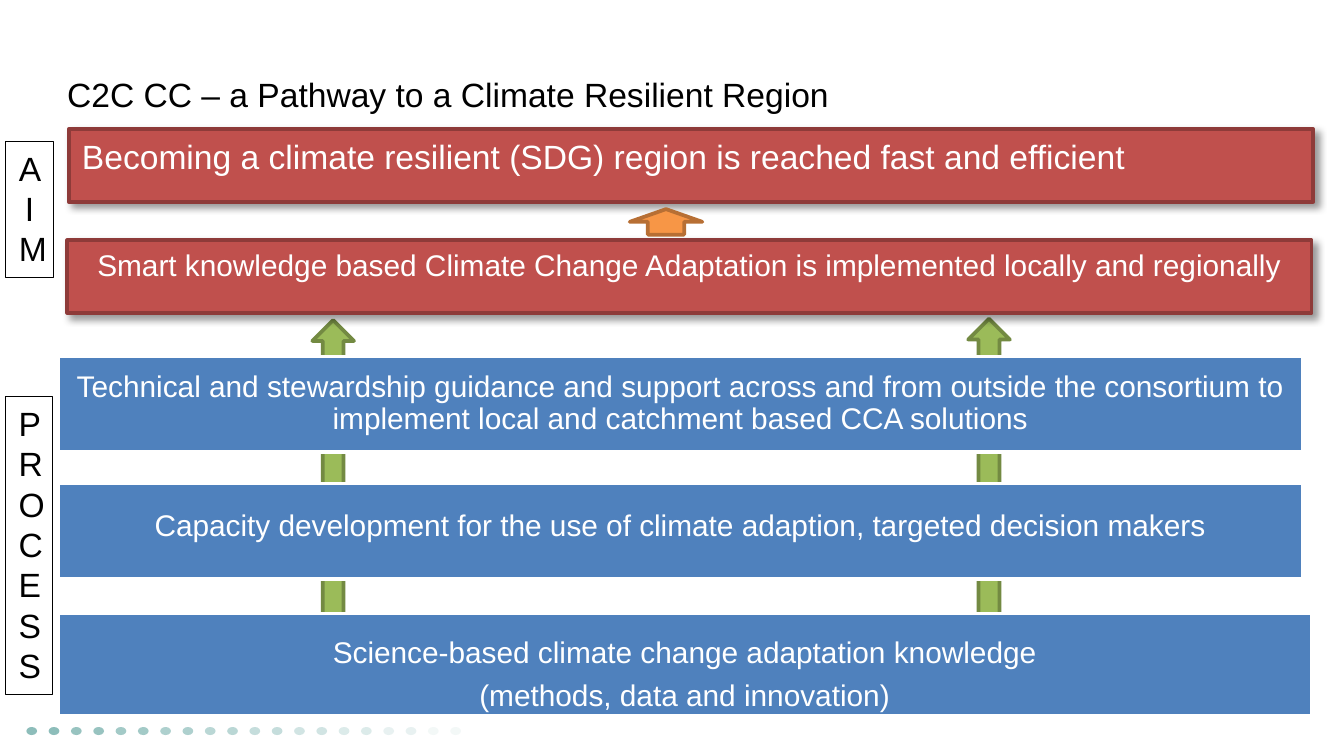
from dataclasses import dataclass
from typing import Any, NamedTuple

from lxml.etree import SubElement
from pptx import Presentation
from pptx.dml.color import RGBColor
from pptx.enum.shapes import MSO_SHAPE as Kind
from pptx.enum.text import MSO_ANCHOR as Anchor, PP_ALIGN as Align
from pptx.oxml.ns import qn
from pptx.util import Inches, Pt

COLS = 100
WIDE = Inches(10)
HIGH = WIDE * 9 // 16
CELL = WIDE / COLS


@dataclass(frozen=True)
class Theme:
    face: str = "Arial"
    big: float = 18
    mid: float = 16
    thick: float = 2
    thin: float = 0.25
    ink: str = "000000"
    paper: str = "FFFFFF"
    dot: str = "8DBDBA"
    blue: str = "4F81BD"
    red: str = "C0504D"
    maroon: str = "8E3B39"
    green: str = "9BBB59"
    olive: str = "738A42"
    gold: str = "F79646"
    brown: str = "B76F34"


THEME = Theme()


class Box(NamedTuple):
    col: float
    row: float
    wide: float
    high: float


class Look(NamedTuple):
    fill: str | None
    line: str | None
    width: float = THEME.thick


class Type(NamedTuple):
    size: float
    color: str
    align: Any = Align.LEFT
    pad: float = 0
    anchor: Any = Anchor.MIDDLE
    para: dict[str, Any] = {}


class Band(NamedTuple):
    box: Box
    high: float
    lines: tuple[str, ...]


class Goal(NamedTuple):
    box: Box
    text: str
    size: float
    align: Any


class Tag(NamedTuple):
    box: Box
    text: str
    align: Any


class Arrow(NamedTuple):
    box: Box
    look: Look


def place(box: Box) -> tuple[int, ...]:
    return tuple(round(cells * CELL) for cells in box)


def assign(target: Any, values: dict[str, Any]) -> None:
    for key, value in values.items():
        setattr(target, key, value)


def draw(shapes: Any, kind: Any, box: Box, look: Look) -> Any:
    shape = shapes.add_shape(kind, *place(box))
    shape.shadow.inherit = False
    if look.fill:
        shape.fill.solid()
        shape.fill.fore_color.rgb = RGBColor.from_string(look.fill)
    else:
        shape.fill.background()
    if look.line:
        shape.line.color.rgb = RGBColor.from_string(look.line)
        shape.line.width = Pt(look.width)
    else:
        shape.line.fill.background()
    return shape


def write(shape: Any, lines: tuple[str, ...], style: Type) -> None:
    frame = shape.text_frame
    sides = ("left", "right", "top", "bottom")
    assign(frame, {"word_wrap": True, "vertical_anchor": style.anchor})
    if style.pad >= 0:
        assign(frame, {f"margin_{side}": Inches(style.pad) for side in sides})
    for i, line in enumerate(lines):
        para = frame.add_paragraph() if i else frame.paragraphs[0]
        assign(para, {"alignment": style.align, **style.para})
        run = para.add_run()
        run.text = line
        assign(run.font, {"name": THEME.face, "size": Pt(style.size)})
        run.font.color.rgb = RGBColor.from_string(style.color)


def label(shapes: Any, box: Box, lines: tuple[str, ...], style: Type) -> None:
    write(shapes.add_textbox(*place(box)), lines, style)


def fade(parent: Any, share: int) -> None:
    SubElement(parent, qn("a:alpha"), val=str(share * 1000))


def shade(shape: Any) -> None:
    effects = shape._element.spPr.find(qn("a:effectLst"))
    outer = SubElement(effects, qn("a:outerShdw"), blurRad=str(Pt(4)),
                       dist=str(Pt(3)), dir="2700000", algn="tl",
                       rotWithShape="0")
    fade(SubElement(outer, qn("a:srgbClr"), val=THEME.ink), 40)


def dots(shapes: Any) -> None:
    for i in range(20):
        dot = draw(shapes, Kind.OVAL, Box(1.96 + i * 1.66, 54.1, 0.8, 0.6),
                   Look(THEME.dot, None))
        fade(dot._element.spPr.find(".//" + qn("a:srgbClr")),
             100 - i // 2 * 10)


def arrow(shapes: Any, item: Arrow) -> None:
    draw(shapes, Kind.UP_ARROW, item.box, item.look)


def band(shapes: Any, item: Band) -> None:
    group = shapes.add_group_shape().shapes
    draw(group, Kind.RECTANGLE, item.box, Look(THEME.blue, THEME.paper))
    style = Type(THEME.mid, THEME.paper, Align.CENTER, 0.06,
                 para={"line_spacing": 0.9, "space_after": Pt(5.6)})
    label(group, item.box._replace(high=item.high), item.lines, style)


def goal(shapes: Any, item: Goal) -> None:
    shape = draw(shapes, Kind.RECTANGLE, item.box,
                 Look(THEME.red, THEME.maroon))
    shade(shape)
    write(shape, (item.text,),
          Type(item.size, THEME.paper, item.align, -1, Anchor.TOP))


def tag(shapes: Any, item: Tag) -> None:
    shape = draw(shapes, Kind.RECTANGLE, item.box,
                 Look(None, THEME.ink, THEME.thin))
    write(shape, (item.text,),
          Type(THEME.big, THEME.ink, item.align, -1, Anchor.TOP))


LEAF = Look(THEME.green, THEME.olive)
STEMS = (Arrow(Box(23.24, 23.82, 3.1, 27.9), LEAF),
         Arrow(Box(72.04, 23.72, 3.1, 27.9), LEAF))
PEAK = Arrow(Box(46.86, 15.56, 5.4, 1.9), Look(THEME.gold, THEME.brown))
BANDS = (
    Band(Box(4.3, 45.66, 93.3, 7.6), 9.2,
         ("Science-based climate change adaptation knowledge",
          "(methods, data and innovation)")),
    Band(Box(4.3, 35.98, 92.64, 7.1), 6.5,
         ("Capacity development for the use of climate adaption, "
          "targeted decision makers",)),
    Band(Box(4.3, 26.52, 92.64, 7.1), 7.1,
         ("Technical and stewardship guidance and support across and from "
          "outside the consortium to implement local and catchment based "
          "CCA solutions",)),
)
GOALS = (
    Goal(Box(5, 17.88, 92.6, 5.4),
         "Smart knowledge based Climate Change Adaptation is implemented "
         "locally and regionally", THEME.mid, Align.CENTER),
    Goal(Box(5.12, 9.62, 92.6, 5.4),
         "Becoming a climate resilient (SDG) region is reached fast and "
         "efficient", THEME.big, Align.LEFT),
)
TAGS = (Tag(Box(0.4, 29.48, 3.5, 22.2), "PROCESS", Align.LEFT),
        Tag(Box(0.42, 10.5, 3.53, 10.13), "AIM", Align.CENTER))


def main() -> None:
    deck = Presentation()
    assign(deck, {"slide_width": WIDE, "slide_height": HIGH})
    shapes = deck.slides.add_slide(deck.slide_layouts[6]).shapes
    dots(shapes)
    for stem in STEMS:
        arrow(shapes, stem)
    label(shapes, Box(5, 2.3, 90, 9.4),
          ("C2C CC – a Pathway to a Climate Resilient Region",),
          Type(THEME.big, THEME.ink))
    for paint, items in ((band, BANDS), (goal, GOALS),
                         (arrow, (PEAK,)), (tag, TAGS)):
        for item in items:
            paint(shapes, item)
    deck.save("out.pptx")


if __name__ == "__main__":
    main()
